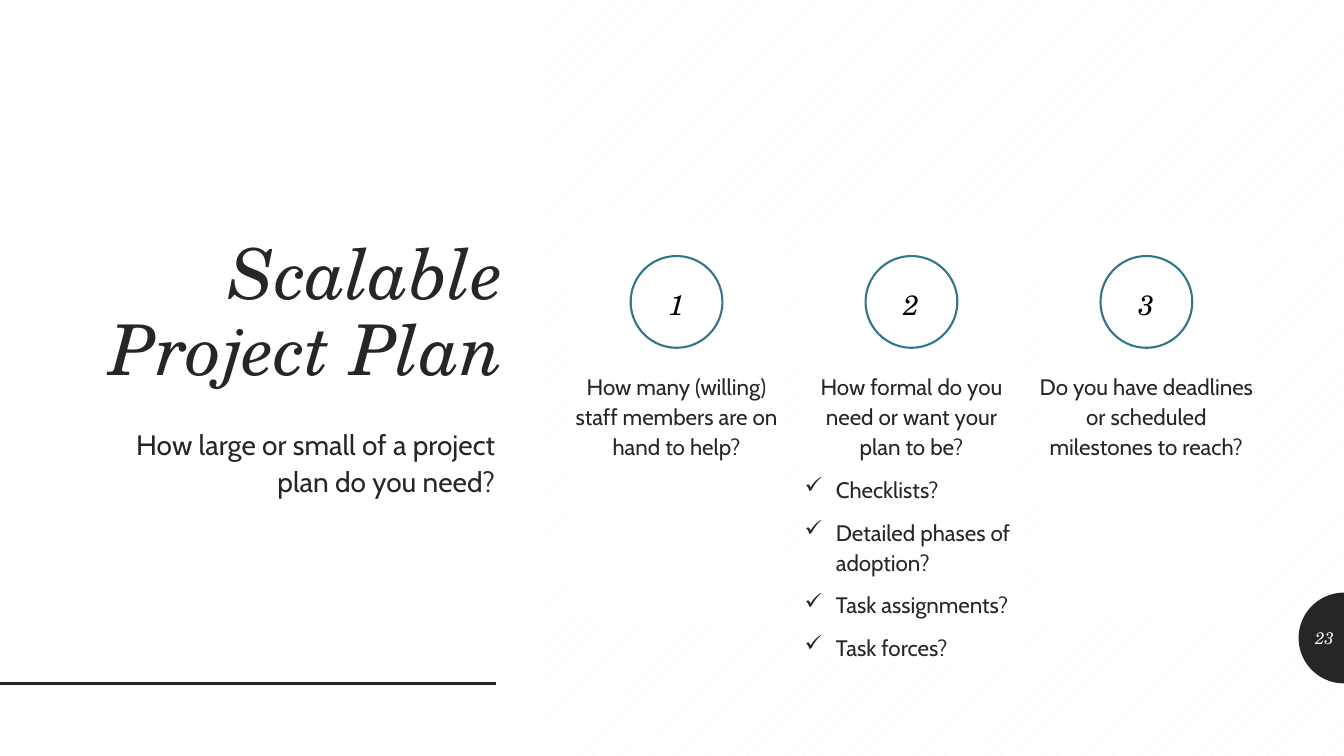
import math
from dataclasses import dataclass
from lxml import etree
from pptx import Presentation
from pptx.dml.color import RGBColor
from pptx.enum.dml import MSO_PATTERN
from pptx.enum.shapes import MSO_CONNECTOR, MSO_SHAPE
from pptx.enum.text import MSO_ANCHOR, PP_ALIGN
from pptx.oxml.ns import qn
from pptx.util import Inches, Pt

RECTANGLE, OVAL = MSO_SHAPE.RECTANGLE, MSO_SHAPE.OVAL
STRAIGHT = MSO_CONNECTOR.STRAIGHT
TOP, MIDDLE, BOTTOM = MSO_ANCHOR.TOP, MSO_ANCHOR.MIDDLE, MSO_ANCHOR.BOTTOM
LEFT, CENTER, RIGHT = PP_ALIGN.LEFT, PP_ALIGN.CENTER, PP_ALIGN.RIGHT
DOTTED = MSO_PATTERN.PERCENT_5

TITLE = "Scalable Project Plan"
SUBTITLE = "How large or small of a project plan do you need?"
PAGE_NUMBER = "23"
QUESTIONS = [
    ("How many (willing) staff members are on hand to help?", [], 3.92),
    ("How formal do you need or want your plan to be?",
     ["Checklists?", "Detailed phases of adoption?", "Task assignments?", "Task forces?"], 4.32),
    ("Do you have deadlines or scheduled milestones to reach?", [], 3.92),
]


@dataclass(frozen=True)
class Theme:
    ink: RGBColor = RGBColor(0x26, 0x26, 0x26)
    white: RGBColor = RGBColor(0xFF, 0xFF, 0xFF)
    pale: RGBColor = RGBColor(0xF5, 0xF5, 0xF5)
    teal: RGBColor = RGBColor(0x32, 0x76, 0x89)
    black: RGBColor = RGBColor(0, 0, 0)
    serif: str = "TeX Gyre Schola"
    sans: str = "Cabin"
    title: int = 50
    large: int = 20
    body: int = 16
    small: int = 12


THEME = Theme()
WIDTH, HEIGHT = 13.33, 7.5
COLUMN_LEFT, COLUMN_TOP, COLUMN_WIDTH, COLUMN_STEP = 5.65, 2.21, 2.12, 2.33
CIRCLE_TOP, CIRCLE_SIZE = 2.54, 0.91
TAB_CENTER, TAB_RADIUS, TAB_STEPS = 6.33, 0.45, 48
BULLET_INDENT = 0.31


def paint(shape, fill, line=None):
    shape.shadow.inherit = False
    shape.fill.solid()
    shape.fill.fore_color.rgb = fill
    if line is None:
        shape.line.fill.background()
    else:
        shape.line.color.rgb = line
        shape.line.width = Pt(1.5)


def add_box(slide, kind, left, top, width, height, fill, line=None):
    shape = slide.shapes.add_shape(kind, Inches(left), Inches(top), Inches(width), Inches(height))
    paint(shape, fill, line)
    return shape


def set_frame(shape, anchor, margins=(0.1, 0.05, 0.1, 0.05)):
    frame = shape.text_frame
    frame.word_wrap = True
    frame.vertical_anchor = anchor
    frame.margin_left, frame.margin_top, frame.margin_right, frame.margin_bottom = map(Inches, margins)
    return frame


def write(paragraph, text, size, font, color, align, spacing=1.12, before=9):
    paragraph.alignment = align
    paragraph.line_spacing = spacing
    paragraph.space_before = Pt(before)
    run = paragraph.add_run()
    run.text = text
    run.font.size = Pt(size)
    run.font.name = font
    run.font.color.rgb = color
    run.font.italic = font == THEME.serif


def add_bullet(paragraph):
    properties = paragraph._p.get_or_add_pPr()
    properties.set("marL", str(Inches(BULLET_INDENT)))
    properties.set("indent", str(-Inches(BULLET_INDENT)))
    etree.SubElement(properties, qn("a:buChar")).set("char", "✓")


def add_text(slide, left, top, width, height, anchor, text, *style):
    box = slide.shapes.add_textbox(Inches(left), Inches(top), Inches(width), Inches(height))
    write(set_frame(box, anchor).paragraphs[0], text, *style)


def add_page_tab(slide):
    angles = [math.pi * (0.5 + step / TAB_STEPS) for step in range(TAB_STEPS + 1)]
    points = [(Inches(WIDTH + TAB_RADIUS * math.cos(angle)),
               Inches(TAB_CENTER + TAB_RADIUS * math.sin(angle))) for angle in angles]
    builder = slide.shapes.build_freeform(*points[0])
    builder.add_line_segments(points[1:], close=True)
    paint(builder.convert_to_shape(), THEME.ink)
    add_text(slide, WIDTH - TAB_RADIUS, 6.13, TAB_RADIUS, 0.4, MIDDLE, PAGE_NUMBER,
             THEME.small, THEME.serif, THEME.pale, RIGHT, 1, 0)


def add_rule(slide):
    rule = slide.shapes.add_connector(STRAIGHT, 0, Inches(6.78), Inches(4.92), Inches(6.78))
    rule.line.color.rgb = THEME.ink
    rule.line.width = Pt(2)
    etree.SubElement(rule._element.spPr, qn("a:effectLst"))


def add_question(slide, index, question, options, height):
    left = COLUMN_LEFT + index * COLUMN_STEP
    panel = add_box(slide, RECTANGLE, left, COLUMN_TOP, COLUMN_WIDTH, height, THEME.white)
    frame = set_frame(panel, TOP, (0, 1.46, 0, 0))
    body = (THEME.body, THEME.sans, THEME.ink)
    write(frame.paragraphs[0], question, *body, CENTER)
    for option in options:
        paragraph = frame.add_paragraph()
        write(paragraph, option, *body, LEFT)
        add_bullet(paragraph)
    circle = add_box(slide, OVAL, left + (COLUMN_WIDTH - CIRCLE_SIZE) / 2, CIRCLE_TOP,
                     CIRCLE_SIZE, CIRCLE_SIZE, THEME.white, THEME.teal)
    write(set_frame(circle, MIDDLE, (0, 0, 0, 0)).paragraphs[0], str(index + 1),
          THEME.large, THEME.serif, THEME.black, CENTER)


def main():
    presentation = Presentation()
    presentation.slide_width, presentation.slide_height = Inches(WIDTH), Inches(HEIGHT)
    slide = presentation.slides.add_slide(presentation.slide_layouts[6])
    background = slide.background.fill
    background.patterned()
    background.pattern = DOTTED
    background.fore_color.rgb = THEME.pale
    background.back_color.rgb = THEME.white

    add_page_tab(slide)
    add_box(slide, RECTANGLE, 0, 0, 5.35, HEIGHT, THEME.white)
    add_rule(slide)
    add_text(slide, 0.9, 2.21, 4.19, 1.71, BOTTOM, TITLE,
             THEME.title, THEME.serif, THEME.ink, RIGHT, 0.9, 0)
    add_text(slide, 0.81, 4.15, 4.2, 1.99, TOP, SUBTITLE,
             THEME.large, THEME.sans, THEME.ink, RIGHT)
    for index, (question, options, height) in enumerate(QUESTIONS):
        add_question(slide, index, question, options, height)
    presentation.save("out.pptx")


if __name__ == "__main__":
    main()
